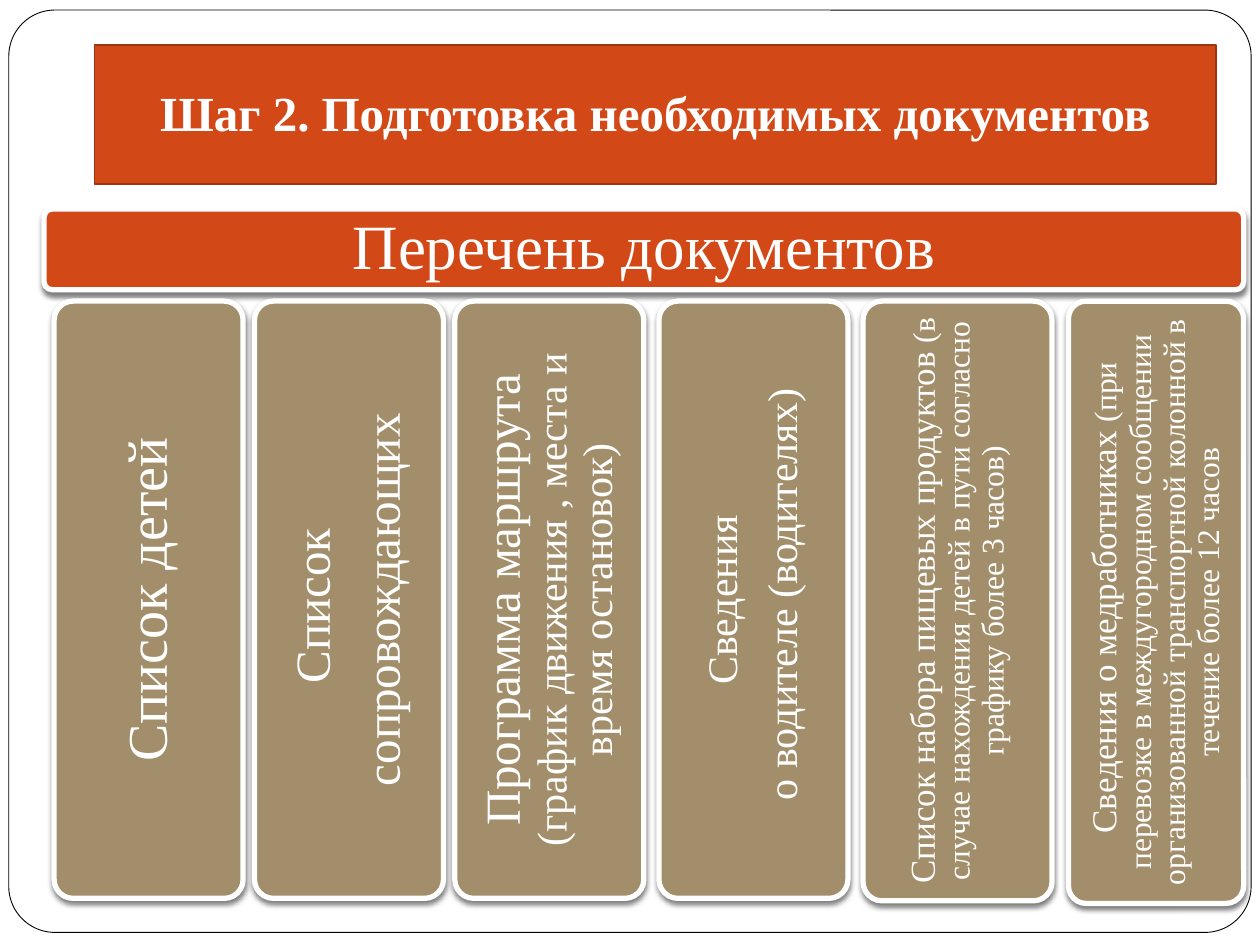
from lxml import etree
from pptx import Presentation
from pptx.dml.color import RGBColor
from pptx.enum.shapes import MSO_SHAPE
from pptx.enum.text import MSO_ANCHOR, PP_ALIGN
from pptx.oxml.ns import qn
from pptx.util import Inches, Pt

RECTANGLE = MSO_SHAPE.RECTANGLE
ROUNDED = MSO_SHAPE.ROUNDED_RECTANGLE
MIDDLE = MSO_ANCHOR.MIDDLE
CENTER = PP_ALIGN.CENTER

WHITE = RGBColor(0xFF, 0xFF, 0xFF)
BLACK = RGBColor(0x00, 0x00, 0x00)
ORANGE = RGBColor(0xD3, 0x48, 0x17)
DARK_ORANGE = RGBColor(0x9C, 0x35, 0x11)
TAN = RGBColor(0xA2, 0x8E, 0x6A)
FONT_NAME = "Times New Roman"
COLUMN_TOP = 2.39

# Each column: left, width, height, inset, paragraphs of (text, size) runs.
COLUMNS = [
    (0.43, 1.5, 4.74, 0.13, [[("Список детей", 32)]]),
    (2.02, 1.5, 4.74, 0.12, [[("Список ", 28)], [("сопровождающих", 28)]]),
    (3.61, 1.5, 4.74, 0.12, [[
        ("Программа маршрута ", 28),
        ("(график движения , места и время остановок)", 24)]]),
    (5.23, 1.5, 4.74, 0.1, [[("Сведения", 24)], [(" о водителе (водителях)", 24)]]),
    (6.85, 1.5, 4.76, 0.08, [[
        ("Список набора пищевых продуктов ", 20),
        ("(в случае нахождения детей в пути согласно графику более 3 часов)", 18)]]),
    (8.48, 1.39, 4.78, 0.08, [[
        (" Сведения о медработниках ", 20),
        ("(при перевозке в междугородном сообщении организованной "
         "транспортной колонной в течение более 12 часов", 18)]]),
]


def set_attributes(target, values):
    """Set each named attribute of the target."""
    for name, value in values.items():
        setattr(target, name, value)


def add_box(slide, kind, box, fill, line, line_width, corner=None):
    """Add a filled and outlined shape without a shadow."""
    shape = slide.shapes.add_shape(kind, *(Inches(length) for length in box))
    shape.shadow.inherit = False
    shape.fill.solid()
    shape.fill.fore_color.rgb = fill
    shape.line.color.rgb = line
    shape.line.width = Pt(line_width)
    if corner is not None:
        shape.adjustments[0] = corner
    return shape


def add_shadow(shape):
    """Give the shape a soft shadow falling straight down."""
    effects = shape._element.spPr.find(qn("a:effectLst"))
    shadow = etree.SubElement(effects, qn("a:outerShdw"), {
        "blurRad": str(Pt(3)), "dist": str(Pt(2)), "dir": "5400000",
        "algn": "ctr", "rotWithShape": "0"})
    color = etree.SubElement(shadow, qn("a:srgbClr"), val=str(BLACK))
    etree.SubElement(color, qn("a:alpha"), val="50000")


def write_text(shape, paragraphs, inset, bold=False, paragraph_format=None):
    """Write centred white paragraphs made of (text, size) runs."""
    frame = shape.text_frame
    margins = ("margin_left", "margin_top", "margin_right", "margin_bottom")
    set_attributes(frame, dict.fromkeys(margins, Inches(inset)))
    set_attributes(frame, {"word_wrap": True, "vertical_anchor": MIDDLE})
    for index, runs in enumerate(paragraphs):
        paragraph = frame.add_paragraph() if index else frame.paragraphs[0]
        set_attributes(paragraph, {"alignment": CENTER, **(paragraph_format or {})})
        for text, size in runs:
            run = paragraph.add_run()
            run.text = text
            set_attributes(run.font, {"name": FONT_NAME, "size": Pt(size), "bold": bold})
            run.font.color.rgb = WHITE


def add_title(slide, box):
    """Add the title banner."""
    shape = add_box(slide, RECTANGLE, box, ORANGE, DARK_ORANGE, 1)
    write_text(shape, [[("Шаг 2. Подготовка необходимых документов", 28)]], 0.1, bold=True)
    shape.text_frame.margin_top = Inches(0.05)


def add_card(slide, box, fill, paragraphs, inset, vertical=False):
    """Add a shadowed rounded card, with text turned upwards if vertical."""
    shape = add_box(slide, ROUNDED, box, fill, WHITE, 3, corner=0.1)
    add_shadow(shape)
    size = paragraphs[0][0][1]
    spacing = {"line_spacing": 0.9, "space_after": Pt(0.35 * size)}
    write_text(shape, paragraphs, inset, paragraph_format=spacing)
    if vertical:
        shape.text_frame._txBody.bodyPr.set("vert", "vert270")


def add_document_list(slide, header_box, column_top):
    """Add the list header and the document columns below it."""
    add_card(slide, header_box, ORANGE, [[("Перечень документов", 36)]], 0.15)
    for left, width, height, inset, paragraphs in COLUMNS:
        box = (left, column_top, width, height)
        add_card(slide, box, TAN, paragraphs, inset, vertical=True)


def main():
    """Build and save the presentation."""
    presentation = Presentation()
    presentation.slide_width = Inches(10)
    presentation.slide_height = Inches(7.5)
    slide = presentation.slides.add_slide(presentation.slide_layouts[6])
    add_box(slide, ROUNDED, (0.07, 0.08, 9.86, 7.32), WHITE, BLACK, 0.5, corner=0.05)
    add_title(slide, (0.75, 0.36, 8.9, 1.1))
    add_document_list(slide, (0.35, 1.66, 9.52, 0.64), COLUMN_TOP)
    presentation.save("out.pptx")


if __name__ == "__main__":
    main()
